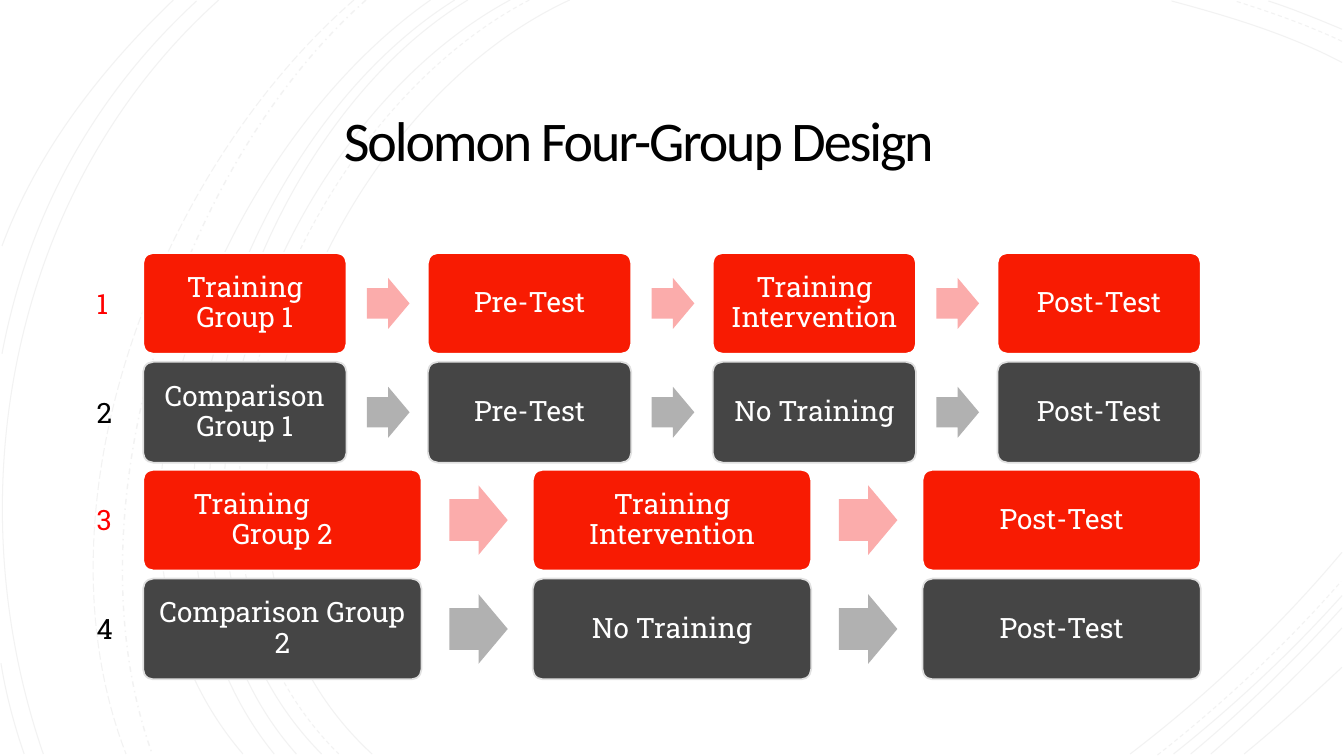
from lxml import etree
from pptx import Presentation
from pptx.dml.color import RGBColor
from pptx.enum.dml import MSO_LINE_DASH_STYLE as Dash
from pptx.enum.shapes import MSO_SHAPE as Shape
from pptx.enum.text import MSO_ANCHOR as Anchor, MSO_AUTO_SIZE as AutoSize, PP_ALIGN as Align
from pptx.oxml.ns import qn
from pptx.util import Inches, Pt

COLORS = {
    "arc": "F2F2F2", "black": "000000", "white": "FFFFFF", "number": "FF0000",
    "red": "F81B02", "pink": "FBACAB", "dark": "454545", "gray": "B1B1B1", "edge": "E0E0E0",
}
TITLE = "Solomon Four-Group Design"
THEMES = {
    "training": {"box": "red", "edge": "white", "arrow": "pink", "number": "number"},
    "comparison": {"box": "dark", "edge": "edge", "arrow": "gray", "number": "black"},
}
ROWS = [
    (2.51, "training", ["Training Group 1", "Pre-Test", "Training Intervention", "Post-Test"]),
    (3.59, "comparison", ["Comparison Group 1", "Pre-Test", "No Training", "Post-Test"]),
    (4.66, "training", ["Training Group 2", "Training Intervention", "Post-Test"]),
    (5.74, "comparison", ["Comparison Group 2", "No Training", "Post-Test"]),
]
HANGING_INDENTS = {"Training Group 2": {"marL": 0.77, "marR": 0.6, "indent": -0.38}}
ARCS = {
    Dash.SOLID: [
        [(5.65, 0), (3.15, 1.15), (1.43, 5.4), (3.69, 7.48)],
        [(13.31, 0.62), (12.78, 0.34), (12.18, 0.16), (11.62, 0.01)],
        [(11.21, 7.48), (11.97, 6.9), (12.69, 6.22), (13.31, 5.48)],
        [(5.06, 0), (2.7, 1.27), (1.1, 5.37), (3.19, 7.48)],
        [(13.31, 0.29), (13.07, 0.19), (12.83, 0.09), (12.58, 0.01)],
        [(11.64, 7.48), (12.23, 7.01), (12.8, 6.48), (13.31, 5.91)],
        [(4.64, 0), (2.44, 1.33), (1.1, 5.41), (2.94, 7.48)],
        [(11.81, 7.48), (12.34, 7.04), (12.84, 6.55), (13.31, 6.03)],
        [(4.51, 0), (2.31, 1.38), (0.97, 5.33), (2.72, 7.48)],
        [(12.01, 7.48), (12.46, 7.09), (12.9, 6.67), (13.31, 6.23)],
        [(4.27, 0), (2.17, 1.47), (0.53, 5.29), (2.41, 7.48)],
        [(12.34, 7.48), (12.67, 7.21), (12.99, 6.92), (13.31, 6.62)],
        [(2.17, 0), (0.11, 1.85), (-0.46, 4.9), (0.43, 7.48)],
        [(1.95, 0.01), (0.92, 0.96), (0.28, 2.14), (0.02, 3.51)],
        [(0.01, 6.58), (0.06, 6.89), (0.14, 7.19), (0.24, 7.48)],
        [(1.72, 0), (1, 0.69), (0.37, 1.5), (0.02, 2.44)],
    ],
    Dash.DASH: [
        [(5.25, 0), (2.85, 1.25), (1.23, 5.37), (3.36, 7.48)],
        [(13.31, 0.41), (12.97, 0.25), (12.6, 0.12), (12.25, 0.01)],
        [(11.48, 7.49), (12.13, 6.98), (12.75, 6.4), (13.3, 5.77)],
    ],
    Dash.DASH_DOT: [[(3.63, 0), (1.76, 1.66), (0.65, 5.09), (1.51, 7.48)]],
    Dash.LONG_DASH: [[(3.51, 0), (1.57, 1.69), (0.29, 4.99), (1.25, 7.48)]],
}
SLIDE_WIDTH, SLIDE_HEIGHT = 13.33, 7.5
LEFT, RIGHT, BOX_HEIGHT = 1.42, 11.91, 1
GAP_RATIO, ARROW_OFFSET, ARROW_WIDTH, ARROW_HEIGHT = 0.4, 1.1, 0.21, 0.25


def color(name):
    return RGBColor.from_string(COLORS[name])


def add_arc(slide, controls, dash):
    points = [(Inches(x), Inches(y)) for x, y in controls]
    builder = slide.shapes.build_freeform(*points[0])
    builder.add_line_segments(points[1:], close=False)
    arc = builder.convert_to_shape()
    segments = list(arc._element.iter(qn("a:lnTo")))
    curve = etree.SubElement(segments[0].getparent(), qn("a:cubicBezTo"))
    for segment in segments:
        curve.append(segment[0])
        segment.getparent().remove(segment)
    arc.shadow.inherit = False
    arc.fill.background()
    arc.line.color.rgb = color("arc")
    arc.line.width = Pt(1 if dash == Dash.DASH_DOT else 0.75)
    arc.line.dash_style = dash


def add_shape(slide, kind, box, fill, adjustments=()):
    shape = slide.shapes.add_shape(kind, *map(Inches, box))
    shape.shadow.inherit = False
    shape.fill.solid()
    shape.fill.fore_color.rgb = color(fill)
    shape.line.fill.background()
    for index, value in enumerate(adjustments):
        shape.adjustments[index] = value
    return shape


def set_insets(frame, inset):
    frame.margin_left = frame.margin_right = Inches(inset)
    frame.margin_top = frame.margin_bottom = Inches(inset)
    frame.vertical_anchor = Anchor.MIDDLE
    frame.word_wrap = True


def write(paragraph, text, font_name, size, font_color):
    run = paragraph.add_run()
    run.text = text
    run.font.name = font_name
    run.font.size = Pt(size)
    run.font.color.rgb = color(font_color)
    return run


def add_title(slide):
    frame = slide.shapes.add_textbox(*map(Inches, (0.92, 0.69, 10.83, 1.48))).text_frame
    set_insets(frame, 0.25)
    paragraph = frame.paragraphs[0]
    paragraph.alignment = Align.CENTER
    paragraph.line_spacing = 0.85
    run = write(paragraph, TITLE, "Calibri", 40, "black")
    run.font._element.set("spc", "-150")


def add_step(slide, left, top, width, text, theme):
    box = (left, top, width, BOX_HEIGHT)
    shape = add_shape(slide, Shape.ROUNDED_RECTANGLE, box, theme["box"], [0.1])
    shape.line.color.rgb = color(theme["edge"])
    shape.line.width = Pt(1.25)
    set_insets(shape.text_frame, 0.08)
    paragraph = shape.text_frame.paragraphs[0]
    indents = HANGING_INDENTS.get(text, {})
    paragraph.alignment = Align.LEFT if indents else Align.CENTER
    paragraph.line_spacing = 0.9
    for name, length in indents.items():
        paragraph._p.get_or_add_pPr().set(name, str(Inches(length)))
    write(paragraph, text, "Roboto Slab", 20, "white")


def add_row(slide, number, top, theme, steps):
    width = (RIGHT - LEFT) / (len(steps) + GAP_RATIO * (len(steps) - 1))
    for position, text in enumerate(steps):
        left = LEFT + position * width * (1 + GAP_RATIO)
        add_step(slide, left, top, width, text, theme)
        if position < len(steps) - 1:
            height = ARROW_HEIGHT * width
            arrow = (left + ARROW_OFFSET * width, top + (BOX_HEIGHT - height) / 2,
                     ARROW_WIDTH * width, height)
            add_shape(slide, Shape.RIGHT_ARROW, arrow, theme["arrow"], [0.6, 0.5])
    frame = slide.shapes.add_textbox(*map(Inches, (0.86, top + 0.28, 0.35, 0.44))).text_frame
    frame.word_wrap = False
    frame.auto_size = AutoSize.SHAPE_TO_FIT_TEXT
    write(frame.paragraphs[0], str(number), "Roboto Slab", 20, theme["number"])


def main():
    """Build the Solomon four-group design slide."""
    presentation = Presentation()
    presentation.slide_width = Inches(SLIDE_WIDTH)
    presentation.slide_height = Inches(SLIDE_HEIGHT)
    slide = presentation.slides.add_slide(presentation.slide_layouts[6])
    add_shape(slide, Shape.RECTANGLE, (0, 0, SLIDE_WIDTH, SLIDE_HEIGHT), "white")
    for dash, arcs in ARCS.items():
        for controls in arcs:
            add_arc(slide, controls, dash)
    add_title(slide)
    for number, (top, theme, steps) in enumerate(ROWS, 1):
        add_row(slide, number, top, THEMES[theme], steps)
    presentation.save("out.pptx")


if __name__ == "__main__":
    main()
